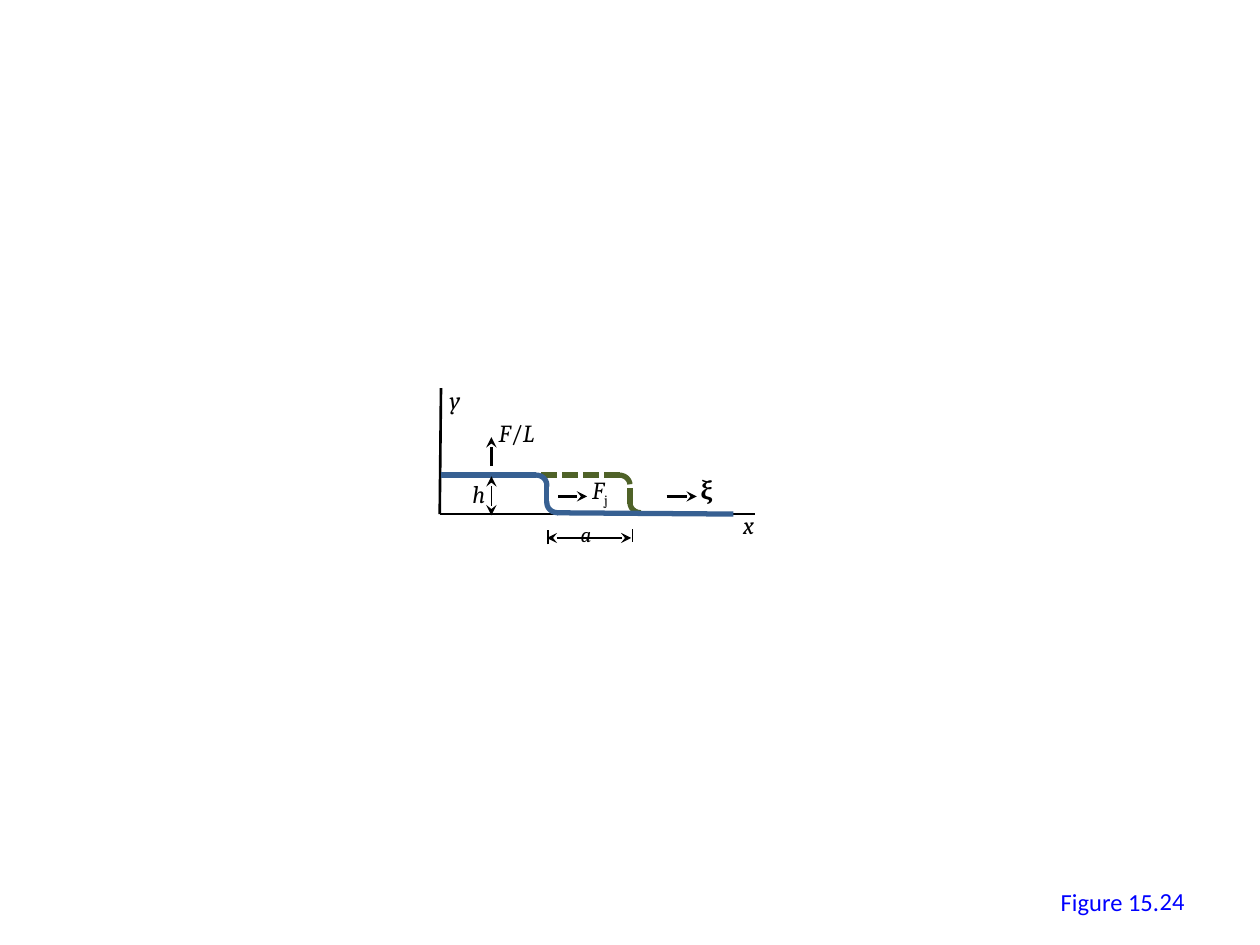
from lxml.etree import SubElement
from pptx import Presentation
from pptx.dml.color import RGBColor
from pptx.enum.dml import MSO_LINE
from pptx.enum.shapes import MSO_CONNECTOR, MSO_SHAPE
from pptx.enum.text import MSO_ANCHOR, PP_ALIGN
from pptx.oxml.ns import qn
from pptx.util import Inches, Pt

BLACK, BLUE, GREEN, CAPTION = "000000", "376092", "4F6228", "0000FF"
CORNER_WIDTH, CORNER_HEIGHT = 0.17, 0.16


def color(hex_string):
    return RGBColor.from_string(hex_string)


def style_line(line, hex_string, width, dashed=False):
    line.color.rgb = color(hex_string)
    line.width = Pt(width)
    if dashed:
        line.dash_style = MSO_LINE.SQUARE_DOT


def add_line(shapes, start, end, hex_string=BLACK, width=1.5, dashed=False, arrows=()):
    """Draw a straight line; arrows names the ends ("head", "tail") with a stealth tip."""
    connector = shapes.add_connector(
        MSO_CONNECTOR.STRAIGHT, *(Inches(value) for value in (*start, *end)))
    style_line(connector.line, hex_string, width, dashed)
    for end_name in arrows:
        SubElement(connector.line._get_or_add_ln(), qn(f"a:{end_name}End"), type="stealth")
    SubElement(connector._element.spPr, qn("a:effectLst"))


def add_corner(shapes, left, top, hex_string, dashed, rotation=0):
    corner = shapes.add_shape(MSO_SHAPE.ARC, Inches(left), Inches(top),
                              Inches(CORNER_WIDTH), Inches(CORNER_HEIGHT))
    corner.adjustments[0] = 52.781
    corner.adjustments[1] = 112.103
    corner.rotation = rotation
    corner.shadow.inherit = False
    corner.fill.background()
    style_line(corner.line, hex_string, 3, dashed)


def add_step(slide, x, riser_bottom, riser_top, hex_string, dashed=False):
    """Draw the rounded step of a surface profile with its riser at x."""
    shapes = slide.shapes.add_group_shape().shapes
    add_corner(shapes, x, 3.91, hex_string, dashed)
    add_corner(shapes, x - CORNER_WIDTH, 3.77, hex_string, dashed, 180)
    add_line(shapes, (x, riser_bottom), (x, riser_top), hex_string, 3, dashed)


def add_text(slide, left, top, width, height, text, size=14, name="Cambria",
             hex_string=BLACK, italic=False, bold=False, wrap=False):
    box = slide.shapes.add_textbox(Inches(left), Inches(top), Inches(width), Inches(height))
    box.text_frame.word_wrap = wrap
    paragraph = box.text_frame.paragraphs[0]
    paragraph.add_run().text = text
    font = paragraph.font
    font.name, font.size, font.italic, font.bold = name, Pt(size), italic, bold
    font.color.rgb = color(hex_string)
    return box


def add_upright_run(box, text):
    run = box.text_frame.paragraphs[0].add_run()
    run.text = text
    run.font.italic = False
    return run


def add_symbol(slide, left, top, width, text, size=14, height=0.34):
    return add_text(slide, left, top, width, height, text, size, italic=True)


def add_profiles_and_axes(slide):
    shapes = slide.shapes
    add_step(slide, 5, 4, 3.85, GREEN, dashed=True)
    add_line(shapes, (4.92, 3.77), (4.17, 3.77), GREEN, 3, dashed=True)
    jog_force = add_symbol(slide, 4.6, 3.72, 0.41, "F")
    subscript = add_upright_run(jog_force, "j")
    subscript.font._element.set("baseline", "-25000")

    add_line(shapes, (5.99, 4.08), (3.49, 4.08))
    add_line(shapes, (3.49, 4.08), (3.5, 3.08))
    add_symbol(slide, 3.47, 3.01, 0.34, "y")
    add_symbol(slide, 5.8, 4, 0.34, "x")

    add_step(slide, 4.34, 3.99, 3.84, BLUE)
    add_line(shapes, (4.25, 3.77), (3.5, 3.77), BLUE, 3)
    add_line(shapes, (5.82, 4.08), (4.42, 4.07), BLUE, 3)


def add_forces(slide):
    for start, end in (((4.43, 3.94), (4.66, 3.94)),
                       ((5.29, 3.94), (5.53, 3.94)),
                       ((3.9, 3.7), (3.9, 3.47))):
        add_line(slide.shapes, start, end, arrows=("tail",))
    add_text(slide, 5.46, 3.72, 0.3, 0.34, "ξ", bold=True)
    line_force = add_symbol(slide, 3.86, 3.27, 0.54, "F")
    add_upright_run(line_force, "/")
    line_force.text_frame.paragraphs[0].add_run().text = "L"


def add_dimensions(slide):
    shapes = slide.shapes
    both_ends = ("head", "tail")
    add_line(shapes, (4.34, 4.27), (5.01, 4.27), width=1, arrows=both_ends)
    add_line(shapes, (4.35, 4.32), (4.35, 4.21), width=1)
    add_line(shapes, (5.02, 4.3), (5.02, 4.2), width=1)
    add_symbol(slide, 4.51, 4.09, 0.33, "a", 12, 0.3)
    add_line(shapes, (3.9, 4.09), (3.9, 3.78), width=1, arrows=both_ends)
    add_symbol(slide, 3.65, 3.75, 0.35, "h")


def add_figure_number(slide):
    add_text(slide, 8.32, 6.99, 0.99, 0.34, "Figure 15.", name="Calibri", hex_string=CAPTION)
    number = add_text(slide, 7.17, 6.95, 2.33, 0.4, "24", name="Calibri",
                      hex_string=CAPTION, wrap=True)
    number.text_frame.vertical_anchor = MSO_ANCHOR.MIDDLE
    number.text_frame.paragraphs[0].alignment = PP_ALIGN.RIGHT


def main():
    presentation = Presentation()
    presentation.slide_width, presentation.slide_height = Inches(10), Inches(7.5)
    slide = presentation.slides.add_slide(presentation.slide_layouts[6])
    add_profiles_and_axes(slide)
    add_forces(slide)
    add_dimensions(slide)
    add_figure_number(slide)
    presentation.save("out.pptx")


if __name__ == "__main__":
    main()
